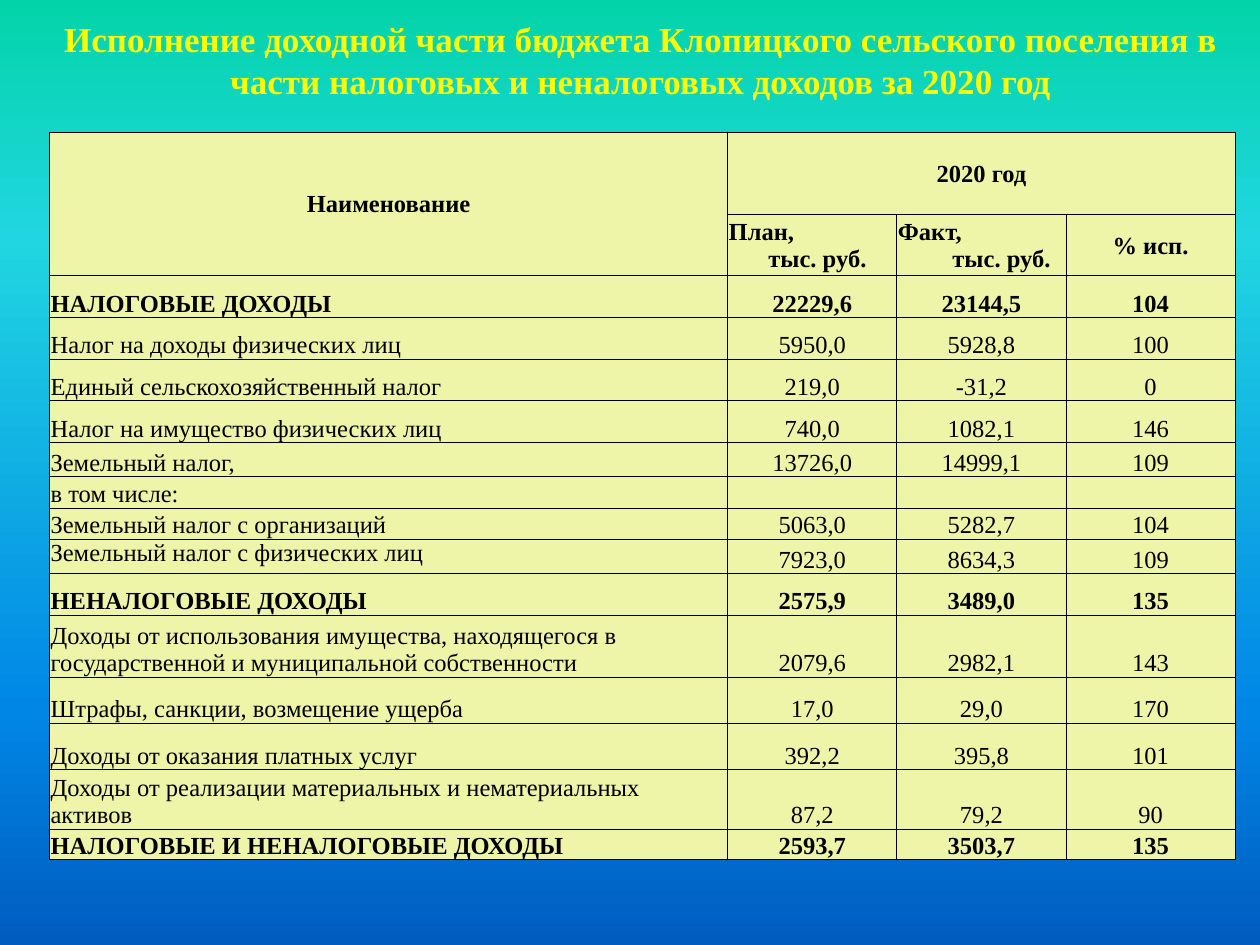
import pptx
import pptx.util
import pptx.dml.color
import pptx.enum.text
import pptx.oxml.ns
import lxml.etree
from dataclasses import dataclass

Cm, Pt = pptx.util.Cm, pptx.util.Pt
ALIGN, ANCHOR = pptx.enum.text.PP_ALIGN, pptx.enum.text.MSO_ANCHOR
qn = pptx.oxml.ns.qn


@dataclass(frozen=True)
class Theme:
    font: str = "Times New Roman"
    title_size: int = 20
    table_size: int = 14
    title: str = "FFFF00"
    text: str = "000000"
    cell: str = "EEF5A9"
    border: str = "000000"
    border_width: float = 0.5
    background: tuple = ((0, "03D4A8"), (25, "21D6E0"), (75, "0087E6"), (100, "005CBF"))


THEME = Theme()

TITLE = ("Исполнение доходной части бюджета Клопицкого сельского поселения "
         "в части налоговых и неналоговых доходов за 2020 год")
NAME_HEADING, YEAR_HEADING, PERCENT_HEADING = "Наименование", "2020 год", "% исп."
# column, measure, unit, left indent of the unit in cm
UNIT_HEADINGS = [(1, "План,", "тыс. руб.", 0.8), (2, "Факт,", "тыс. руб.", 1.1)]

# row height in cm, name, plan, actual, percent
ROWS = [
    (0.84, "НАЛОГОВЫЕ ДОХОДЫ", "22229,6", "23144,5", "104"),
    (0.84, "Налог на доходы физических лиц", "5950,0", "5928,8", "100"),
    (0.84, "Единый сельскохозяйственный налог", "219,0", "-31,2", "0"),
    (0.84, "Налог на имущество физических лиц", "740,0", "1082,1", "146"),
    (0.69, "Земельный налог,", "13726,0", "14999,1", "109"),
    (0.63, "в том числе:", "", "", ""),
    (0.63, "Земельный налог с организаций", "5063,0", "5282,7", "104"),
    (0.69, "Земельный налог с физических лиц", "7923,0", "8634,3", "109"),
    (0.84, "НЕНАЛОГОВЫЕ ДОХОДЫ", "2575,9", "3489,0", "135"),
    (1.25, "Доходы от использования имущества, находящегося в государственной "
           "и муниципальной собственности", "2079,6", "2982,1", "143"),
    (0.93, "Штрафы, санкции, возмещение ущерба", "17,0", "29,0", "170"),
    (0.93, "Доходы от оказания платных услуг", "392,2", "395,8", "101"),
    (1.11, "Доходы от реализации материальных и нематериальных активов",
     "87,2", "79,2", "90"),
    (0.61, "НАЛОГОВЫЕ И НЕНАЛОГОВЫЕ ДОХОДЫ", "2593,7", "3503,7", "135"),
]
TOP_ALIGNED = "Земельный налог с физических лиц"
HEADING_HEIGHTS = [1.67, 1.23]
COLUMN_WIDTHS = [13.67, 3.41, 3.41, 3.41]


def rgb(color):
    return pptx.dml.color.RGBColor.from_string(color)


def format_paragraph(p, align, size, color, bold):
    p.alignment = align
    for r in p.runs:
        r.font.name, r.font.size, r.font.bold = THEME.font, Pt(size), bold
        r.font.color.rgb = rgb(color)
    if not p.runs:
        p._p.get_or_add_endParaRPr().set("sz", str(size * 100))


def paint_background(slide):
    fill = slide.background.fill
    fill.gradient()
    fill.gradient_angle = 270
    stops = slide.element.find(".//" + qn("a:gsLst"))
    for stop in list(stops):
        stops.remove(stop)
    for percent, color in THEME.background:
        stop = lxml.etree.SubElement(stops, qn("a:gs"), pos=str(percent * 1000))
        lxml.etree.SubElement(stop, qn("a:srgbClr"), val=color)


def add_title(slide):
    s = slide.shapes.add_textbox(Cm(1), Cm(0.4), Cm(23.83), Cm(1.78))
    tf = s.text_frame
    tf.word_wrap = True
    tf.vertical_anchor = ANCHOR.BOTTOM
    tf.text = TITLE
    format_paragraph(tf.paragraphs[0], ALIGN.CENTER, THEME.title_size, THEME.title, True)


def style_cell(cell):
    """Set insets, borders and fill."""
    cell.margin_left = cell.margin_right = cell.margin_top = Cm(0.02)
    cell.margin_bottom = 0
    tc_pr = cell._tc.get_or_add_tcPr()
    for side in ("a:lnL", "a:lnR", "a:lnT", "a:lnB"):
        line = lxml.etree.SubElement(tc_pr, qn(side), w=str(Pt(THEME.border_width)))
        solid = lxml.etree.SubElement(line, qn("a:solidFill"))
        lxml.etree.SubElement(solid, qn("a:srgbClr"), val=THEME.border)
    cell.fill.solid()
    cell.fill.fore_color.rgb = rgb(THEME.cell)


def write_cell(cell, text, align=ALIGN.CENTER, anchor=ANCHOR.MIDDLE, bold=True):
    cell.text_frame.text = text
    cell.vertical_anchor = anchor
    for p in cell.text_frame.paragraphs:
        format_paragraph(p, align, THEME.table_size, THEME.text, bold)


def write_headings(table):
    table.cell(0, 0).merge(table.cell(1, 0))
    table.cell(0, 1).merge(table.cell(0, 3))
    write_cell(table.cell(0, 0), NAME_HEADING)
    write_cell(table.cell(0, 1), YEAR_HEADING)
    write_cell(table.cell(1, 3), PERCENT_HEADING)
    for col, measure, unit, indent in UNIT_HEADINGS:
        cell = table.cell(1, col)
        write_cell(cell, measure + "\n" + unit, ALIGN.LEFT)
        cell.text_frame.paragraphs[1]._p.get_or_add_pPr().set("marL", str(Cm(indent)))


def add_income_table(slide):
    heights = HEADING_HEIGHTS + [row[0] for row in ROWS]
    frame = slide.shapes.add_table(len(heights), len(COLUMN_WIDTHS), Cm(1), Cm(2.66),
                                   Cm(sum(COLUMN_WIDTHS)), Cm(sum(heights)))
    table = frame.table
    for column, width in zip(table.columns, COLUMN_WIDTHS):
        column.width = Cm(width)
    for row, height in zip(table.rows, heights):
        row.height = Cm(height)
    for cell in table.iter_cells():
        style_cell(cell)
    write_headings(table)
    for i, (_, name, *values) in enumerate(ROWS, len(HEADING_HEIGHTS)):
        bold = name.isupper()
        anchor = ANCHOR.TOP if name == TOP_ALIGNED else ANCHOR.BOTTOM
        write_cell(table.cell(i, 0), name, ALIGN.LEFT, anchor, bold)
        for col, value in enumerate(values, 1):
            write_cell(table.cell(i, col), value, anchor=ANCHOR.BOTTOM, bold=bold)


def main():
    prs = pptx.Presentation()
    prs.slide_width, prs.slide_height = Cm(25.4), Cm(19.05)
    slide = prs.slides.add_slide(prs.slide_layouts[6])
    paint_background(slide)
    add_title(slide)
    add_income_table(slide)
    prs.save("out.pptx")


if __name__ == "__main__":
    main()
